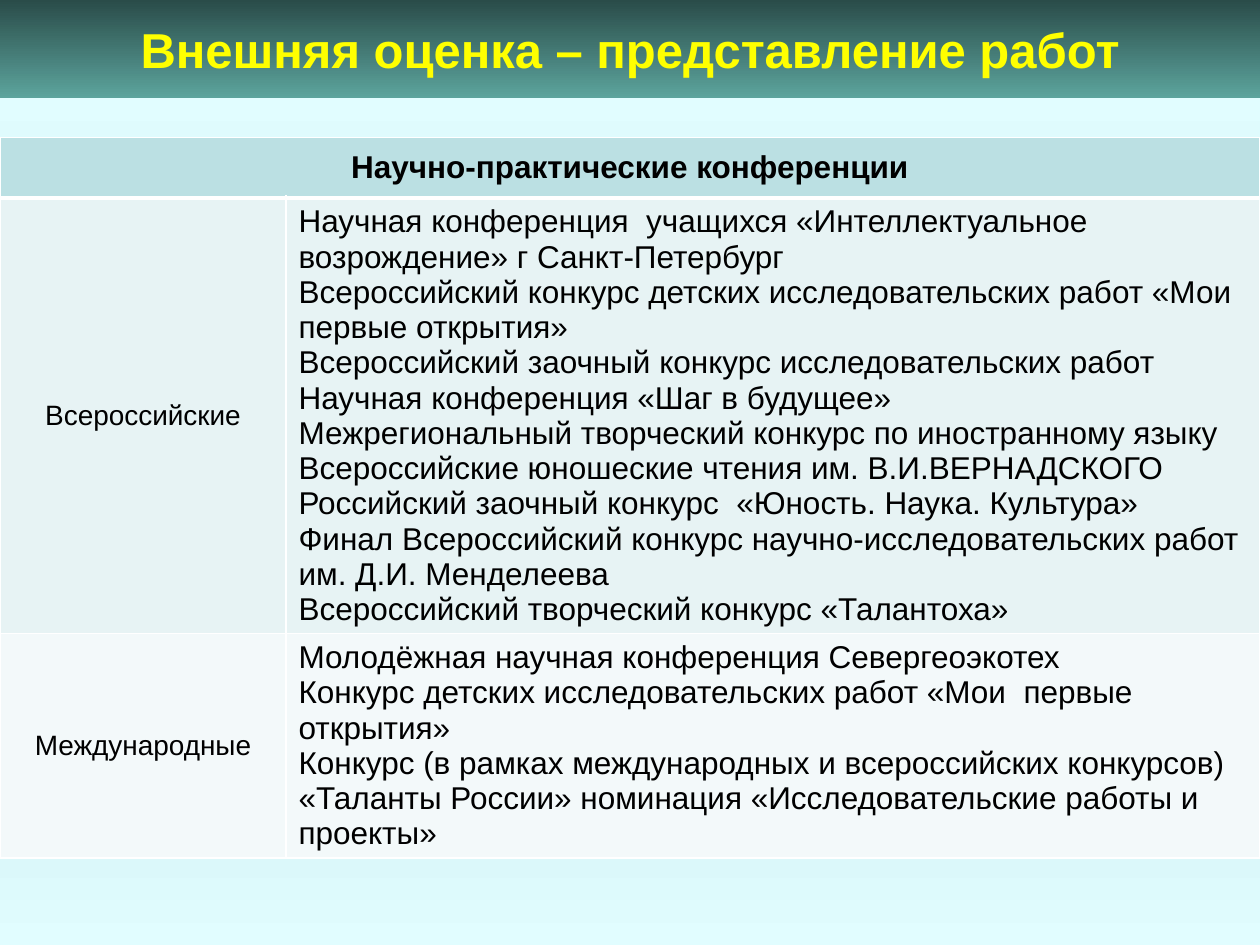
"""Build a slide with a title band and a table of student conferences."""
import copy

import lxml.etree
import pptx
import pptx.dml.color
import pptx.enum.shapes
import pptx.enum.text
import pptx.oxml.ns
import pptx.util

HUES = {
    "pale": "E1FDFF", "aqua": "BBE0E3", "dark": "2A4C49", "teal": "5CA49D",
    "gold": "FFFF00", "ink": "000000", "white": "FFFFFF",
    "tint": "E7F3F4", "light": "F3F9FA",
}
ROWS = [
    ("Всероссийские", "tint", [
        "Научная конференция  учащихся «Интеллектуальное возрождение» г Санкт-Петербург",
        "Всероссийский конкурс детских исследовательских работ «Мои первые открытия»",
        "Всероссийский заочный конкурс исследовательских работ",
        "Научная конференция «Шаг в будущее»",
        "Межрегиональный творческий конкурс по иностранному языку",
        "Всероссийские юношеские чтения им. В.И.ВЕРНАДСКОГО",
        "Российский заочный конкурс  «Юность. Наука. Культура»",
        "Финал Всероссийский конкурс научно-исследовательских работ им. Д.И. Менделеева",
        "Всероссийский творческий конкурс «Талантоха»",
    ]),
    ("Международные", "light", [
        "Молодёжная научная конференция Севергеоэкотех",
        "Конкурс детских исследовательских работ «Мои  первые открытия»",
        "Конкурс (в рамках международных и всероссийских конкурсов) "
        "«Таланты России» номинация «Исследовательские работы и проекты»",
    ]),
]
Inches = pptx.util.Inches
RGB = pptx.dml.color.RGBColor.from_string
ALIGN = pptx.enum.text.PP_ALIGN
MIDDLE = pptx.enum.text.MSO_ANCHOR.MIDDLE
qn = pptx.oxml.ns.qn


def shade(shape, names):
    """Fill a shape with evenly spaced colours from top to bottom."""
    shape.fill.gradient()
    shape.fill.gradient_angle = 270
    stops = shape.element.spPr.find(".//" + qn("a:gsLst"))
    for _ in names[2:]:
        stops.append(copy.deepcopy(stops[0]))
    for i, (stop, name) in enumerate(zip(shape.fill.gradient_stops, names)):
        stop.position = i / (len(names) - 1)
        stop.color.rgb = RGB(HUES[name])


def write(frame, lines, size, hue="ink", bold=False, align=ALIGN.LEFT):
    """Put one paragraph per line into a text frame."""
    frame.text = "\n".join(lines)
    for para in frame.paragraphs:
        para.alignment = align
        para.font.name = "Arial"
        para.font.size = pptx.util.Pt(size)
        para.font.bold = bold
        para.font.color.rgb = RGB(HUES[hue])


deck = pptx.Presentation()
deck.slide_width, deck.slide_height = Inches(10), Inches(7.5)
wide, high = deck.slide_width, deck.slide_height
slide = deck.slides.add_slide(deck.slide_layouts[5])
band = Inches(0.78)

title = slide.shapes.title
title.left, title.top, title.width, title.height = 0, 0, wide, band
shade(title, ["dark", "teal"])
write(title.text_frame, ["Внешняя оценка – представление работ"], 28, "gold", True, ALIGN.CENTER)
title.text_frame.vertical_anchor = MIDDLE
title.text_frame.word_wrap = False

back = slide.shapes.add_shape(pptx.enum.shapes.MSO_SHAPE.RECTANGLE, 0, band, wide, high - band)
back.shadow.inherit = False
back.line.fill.background()
shade(back, ["pale", "aqua", "pale"])
title.element.addprevious(back.element)

tall = [0.48, 3.45, 1.78]
table = slide.shapes.add_table(3, 2, 0, Inches(1.09), wide, Inches(sum(tall))).table
for col, width in zip(table.columns, [2.27, 7.73]):
    col.width = Inches(width)
for row, height in zip(table.rows, tall):
    row.height = Inches(height)

head = table.cell(0, 0)
head.merge(table.cell(0, 1))
write(head.text_frame, ["Научно-практические конференции"], 18, bold=True, align=ALIGN.CENTER)
for r, (group, hue, events) in enumerate(ROWS, 1):
    write(table.cell(r, 0).text_frame, [group], 16, align=ALIGN.CENTER)
    write(table.cell(r, 1).text_frame, events, 18)

fills = ["aqua"] + [hue for _, hue, _ in ROWS]
for r, hue in enumerate(fills):
    for cell in table.rows[r].cells:
        cell.vertical_anchor = MIDDLE
        props = cell._tc.get_or_add_tcPr()
        for side in "LRTB":
            thick = 3 if (r, side) in [(0, "B"), (1, "T")] else 1
            edge = lxml.etree.SubElement(props, qn("a:ln" + side), w=str(pptx.util.Pt(thick)))
            solid = lxml.etree.SubElement(edge, qn("a:solidFill"))
            lxml.etree.SubElement(solid, qn("a:srgbClr"), val=HUES["white"])
        cell.fill.solid()
        cell.fill.fore_color.rgb = RGB(HUES[hue])

deck.save("out.pptx")
